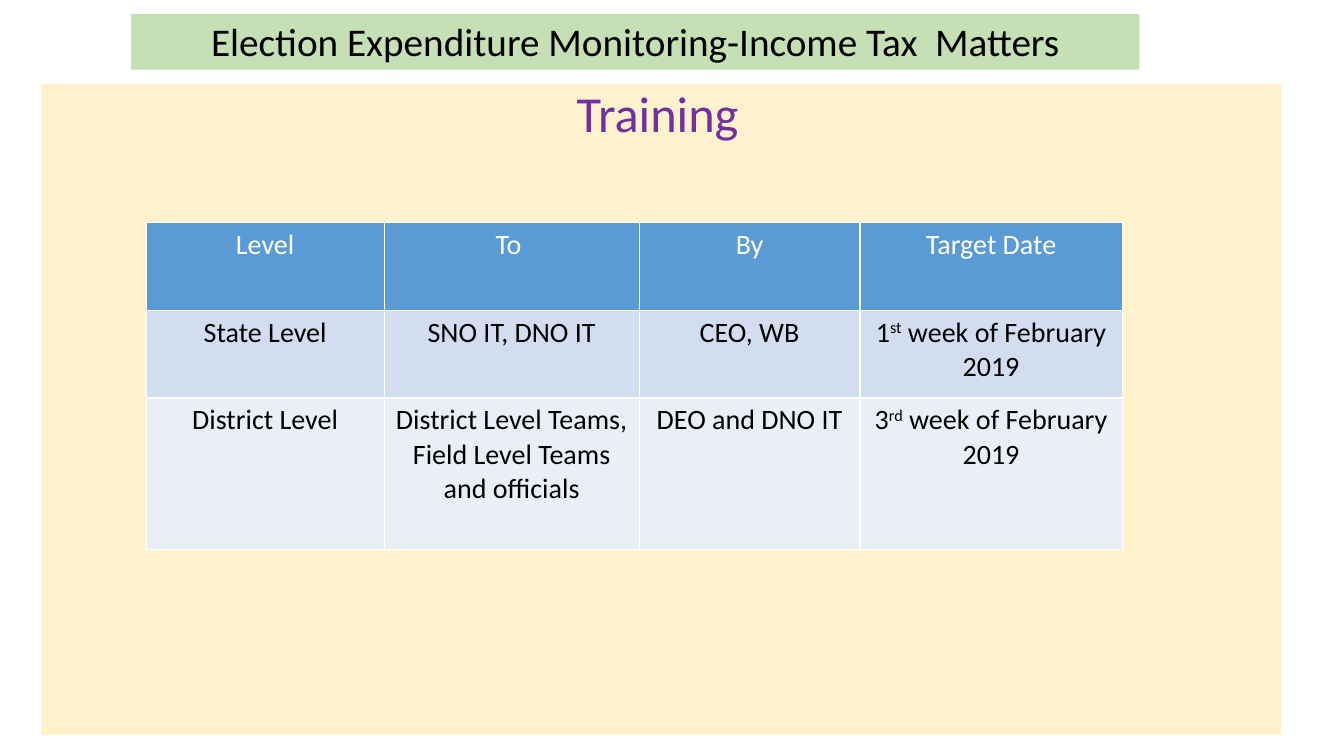
from lxml import etree
from pptx import Presentation
from pptx.dml.color import RGBColor
from pptx.enum.shapes import MSO_SHAPE
from pptx.enum.text import MSO_ANCHOR, PP_ALIGN
from pptx.oxml.ns import qn
from pptx.util import Inches, Pt

RECT = MSO_SHAPE.RECTANGLE
TOP, BOTTOM = MSO_ANCHOR.TOP, MSO_ANCHOR.BOTTOM
CENTER = PP_ALIGN.CENTER
FONT = "Calibri"

COLUMN_WIDTHS = [2.36, 2.53, 2.19, 2.6]
ROW_HEIGHTS = [0.87, 0.87, 1.5]
ROW_FILLS = ["5B9BD5", "D2DEEF", "EAEFF7"]
# A cell given as a tuple alternates normal and superscript text
SCHEDULE = [
    ["Level", "To ", "By", "Target Date"],
    ["State Level", "SNO IT, DNO IT", "CEO, WB",
     ("1", "st", " week of February 2019")],
    ["District Level", "District Level Teams, Field Level Teams and officials",
     "DEO and DNO IT", ("3", "rd", " week of February 2019")],
]


def rgb(color):
    return RGBColor.from_string(color)


def add_text(p, text, size=20, color="000000", superscript=False):
    r = p.add_run()
    r.text = text
    r.font.name = FONT
    r.font.size = Pt(size)
    r.font.bold = False
    r.font.color.rgb = rgb(color)
    if superscript:
        r._r.get_or_add_rPr().set("baseline", "30000")


def add_panel(s, box, fill, anchor):
    """Draw a plain filled panel and return its first paragraph."""
    sp = s.shapes.add_shape(RECT, *map(Inches, box))
    sp.shadow.inherit = False
    sp.fill.solid()
    sp.fill.fore_color.rgb = rgb(fill)
    sp.line.fill.background()
    tf = sp.text_frame
    tf.word_wrap = True
    tf.vertical_anchor = anchor
    p = tf.paragraphs[0]
    p.alignment = CENTER
    p.line_spacing = 0.9
    return p


def set_borders(cell, color="FFFFFF", width=1):
    tcPr = cell._tc.get_or_add_tcPr()
    for i, side in enumerate(("lnL", "lnR", "lnT", "lnB")):
        ln = etree.Element(qn(f"a:{side}"), w=str(Pt(width)))
        fill = etree.SubElement(ln, qn("a:solidFill"))
        etree.SubElement(fill, qn("a:srgbClr"), val=color)
        tcPr.insert(i, ln)


def add_schedule(s, left, top):
    size = (sum(COLUMN_WIDTHS), sum(ROW_HEIGHTS))
    table = s.shapes.add_table(len(SCHEDULE), len(COLUMN_WIDTHS),
                               *map(Inches, (left, top, *size))).table
    for column, width in zip(table.columns, COLUMN_WIDTHS):
        column.width = Inches(width)
    for i, values in enumerate(SCHEDULE):
        table.rows[i].height = Inches(ROW_HEIGHTS[i])
        color = "FFFFFF" if i == 0 else "000000"
        for j, value in enumerate(values):
            cell = table.cell(i, j)
            cell.fill.solid()
            cell.fill.fore_color.rgb = rgb(ROW_FILLS[i])
            set_borders(cell)
            p = cell.text_frame.paragraphs[0]
            p.alignment = CENTER
            parts = (value,) if isinstance(value, str) else value
            for k, part in enumerate(parts):
                add_text(p, part, color=color, superscript=k % 2 == 1)


def main():
    prs = Presentation()
    prs.slide_width, prs.slide_height = Inches(13.33), Inches(7.5)
    s = prs.slides.add_slide(prs.slide_layouts[6])

    # Title band
    p = add_panel(s, (1.3, 0.14, 10, 0.55), "C5E0B4", BOTTOM)
    add_text(p, "Election Expenditure Monitoring-Income Tax  Matters", size=28)

    # Training panel
    p = add_panel(s, (0.41, 0.83, 12.3, 6.46), "FFF2CC", TOP)
    add_text(p, "Training", size=36, color="7030A0")
    add_text(p, " ", size=24)

    # Training schedule
    add_schedule(s, 1.45, 2.21)

    prs.save("out.pptx")


if __name__ == "__main__":
    main()
